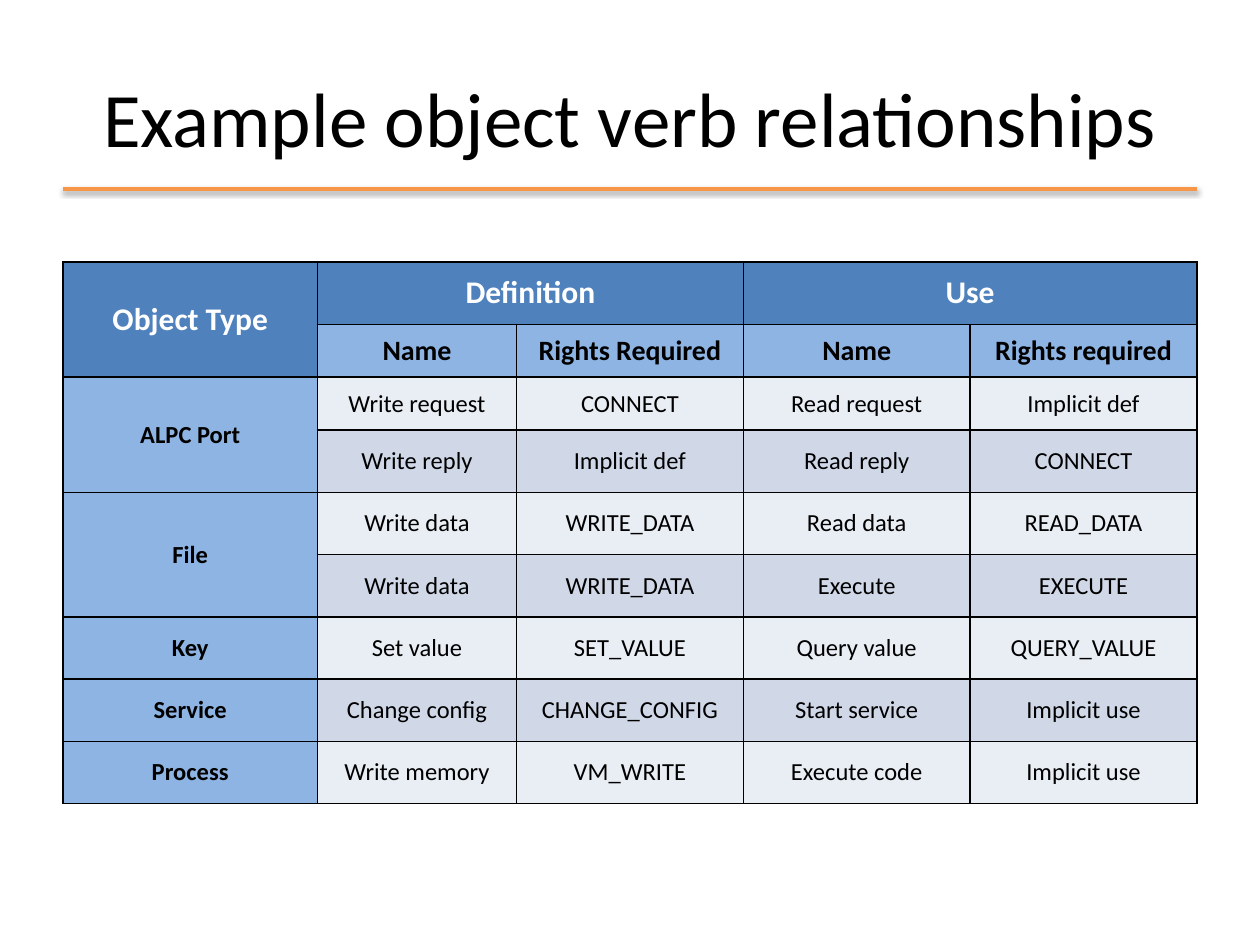
from lxml import etree
from pptx import Presentation
from pptx import util as u
from pptx.dml.color import RGBColor
from pptx.enum import shapes, text
from pptx.oxml.ns import qn

THEME = {
    "font": "Calibri", "ink": "000000", "white": "FFFFFF", "rule": "F79646",
    "head": "4F81BD", "label": "8EB4E3", "bands": ("E9EDF4", "D0D8E8"),
    "title_pt": 44, "head_pt": 18, "subhead_pt": 16, "body_pt": 14,
}

# None marks a cell that is covered by a merged neighbour
ROWS = [
    ("Object Type", "Definition", None, "Use", None),
    (None, "Name", "Rights Required", "Name", "Rights required"),
    ("ALPC Port", "Write request", "CONNECT", "Read request", "Implicit def"),
    (None, "Write reply", "Implicit def", "Read reply", "CONNECT"),
    ("File", "Write data", "WRITE_DATA", "Read data", "READ_DATA"),
    (None, "Write data", "WRITE_DATA", "Execute", "EXECUTE"),
    ("Key", "Set value", "SET_VALUE", "Query value", "QUERY_VALUE"),
    ("Service", "Change config", "CHANGE_CONFIG", "Start service", "Implicit use"),
    ("Process", "Write memory", "VM_WRITE", "Execute code", "Implicit use"),
]
MERGES = [((0, 0), (1, 0)), ((0, 1), (0, 2)), ((0, 3), (0, 4)),
          ((2, 0), (3, 0)), ((4, 0), (5, 0))]


def write(frame, words, size, color, bold=False):
    frame.word_wrap = True
    frame.vertical_anchor = text.MSO_ANCHOR.MIDDLE
    paragraph = frame.paragraphs[0]
    paragraph.text = words
    paragraph.alignment = text.PP_ALIGN.CENTER
    font = paragraph.font
    font.name, font.size, font.bold = THEME["font"], u.Pt(size), bold
    font.color.rgb = RGBColor.from_string(color)


def add_color(parent, color):
    fill = etree.SubElement(parent, qn("a:solidFill"))
    return etree.SubElement(fill, qn("a:srgbClr"), val=color)


deck = Presentation()
deck.slide_width, deck.slide_height = u.Inches(10), u.Inches(7.5)
slide = deck.slides.add_slide(deck.slide_layouts[6])
margin = deck.slide_width // 20
content_width = deck.slide_width - 2 * margin

# Orange rule with a soft shadow below it
rule_y = deck.slide_height // 5
rule = slide.shapes.add_connector(shapes.MSO_CONNECTOR.STRAIGHT, margin, rule_y,
                                  margin + content_width, rule_y)
rule.line.color.rgb = RGBColor.from_string(THEME["rule"])
rule.line.width = u.Pt(2)
effects = etree.SubElement(rule._element.spPr, qn("a:effectLst"))
shadow = etree.SubElement(effects, qn("a:outerShdw"), blurRad=str(u.Pt(3.1)),
                          dist=str(u.Pt(1.6)), dir="5400000", rotWithShape="0")
shadow_color = etree.SubElement(shadow, qn("a:srgbClr"), val=THEME["ink"])
etree.SubElement(shadow_color, qn("a:alpha"), val="38000")

# Title
title = slide.shapes.add_textbox(margin, u.Inches(0.3), content_width, u.Inches(1.25))
write(title.text_frame, "Example object verb relationships", THEME["title_pt"], THEME["ink"])

# Table grid: a wide label column, two shorter rows under the top header
table_height = u.Inches(4.3)
short_row = u.Inches(0.42)
tall_row = (table_height - 2 * short_row) // 7
table = slide.shapes.add_table(len(ROWS), len(ROWS[0]), margin, u.Inches(2.08),
                               content_width, table_height).table
table.first_row = table.horz_banding = False
for column, width in zip(table.columns, (2.02, 1.58, 1.8, 1.8, 1.8)):
    column.width = u.Inches(width)
for index, row in enumerate(table.rows):
    row.height = short_row if index in (1, 2) else tall_row
for first, last in MERGES:
    table.cell(*first).merge(table.cell(*last))

# Cells: borders, fill by role, then text
for r, row in enumerate(ROWS):
    for c, words in enumerate(row):
        cell = table.cell(r, c)
        color, bold = THEME["ink"], r < 2 or c == 0
        if r == 0 or (r == 1 and c == 0):
            fill, size, color = THEME["head"], THEME["head_pt"], THEME["white"]
        elif r == 1:
            fill, size = THEME["label"], THEME["subhead_pt"]
        else:
            fill = THEME["label"] if c == 0 else THEME["bands"][r % 2]
            size = THEME["body_pt"]

        properties = cell._tc.get_or_add_tcPr()
        for side in ("a:lnL", "a:lnR", "a:lnT", "a:lnB"):
            border = etree.SubElement(properties, qn(side), w=str(u.Pt(1)))
            add_color(border, THEME["ink"])
        cell.fill.solid()
        cell.fill.fore_color.rgb = RGBColor.from_string(fill)
        if words:
            write(cell.text_frame, words, size, color, bold)
            cell.vertical_anchor = text.MSO_ANCHOR.MIDDLE

deck.save("out.pptx")
